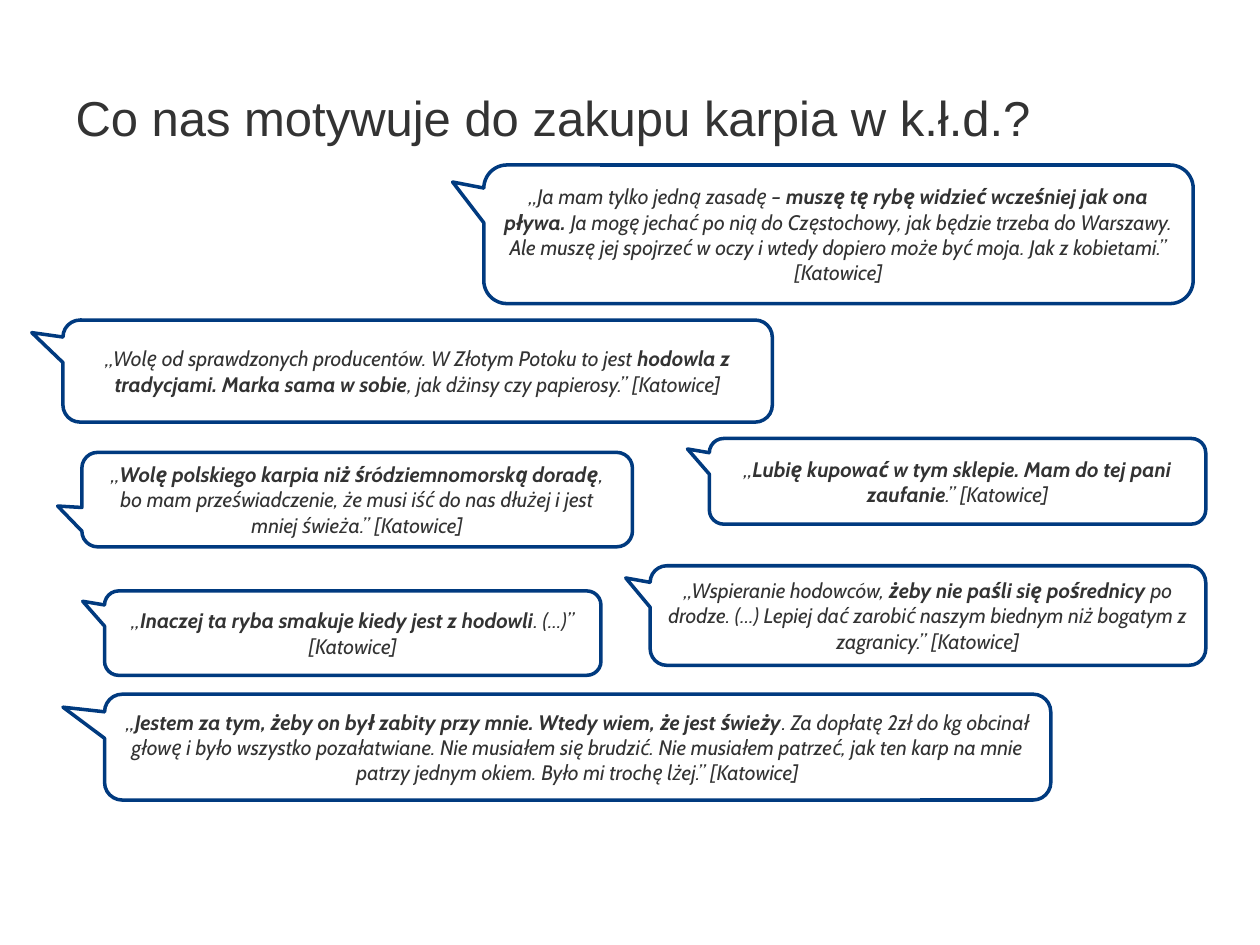
from dataclasses import dataclass

from pptx import Presentation
from pptx.dml.color import RGBColor
from pptx.enum.shapes import MSO_SHAPE
from pptx.enum.text import MSO_ANCHOR, PP_ALIGN
from pptx.slide import Slide
from pptx.text.text import Font
from pptx.util import Inches, Pt


@dataclass(frozen=True)
class Theme:
    text: RGBColor = RGBColor(0x33, 0x33, 0x33)
    outline: RGBColor = RGBColor(0x00, 0x3A, 0x7F)
    paper: RGBColor = RGBColor(0xFF, 0xFF, 0xFF)
    outline_width: Pt = Pt(2)
    title_format = {"name": "Arial", "size": Pt(28)}
    quote_format = {"name": "Cabin", "size": Pt(12), "italic": True}


@dataclass(frozen=True)
class Quote:
    left: float
    top: float
    width: float
    height: float
    before: str
    stressed: str
    after: str
    tail_y: float = -0.377


THEME = Theme()
TAIL_X = -0.544
CORNER = 0.167
TITLE = "Co nas motywuje do zakupu karpia w k.ł.d.?"
QUOTES = [
    Quote(3.84, 1.31, 5.63, 1.1, "„Ja mam tylko jedną zasadę – ",
          "muszę tę rybę widzieć wcześniej jak ona pływa.",
          " Ja mogę jechać po nią do Częstochowy, jak będzie trzeba do Warszawy. "
          "Ale muszę jej spojrzeć w oczy i wtedy dopiero może być moja. "
          "Jak z kobietami.” [Katowice]"),
    Quote(0.5, 2.54, 5.63, 0.81,
          "„Wolę od sprawdzonych producentów. W Złotym Potoku to jest ",
          "hodowla z tradycjami. Marka sama w sobie",
          ", jak dżinsy czy papierosy.” [Katowice]"),
    Quote(5.16, 4.49, 4.41, 0.79, "„Wspieranie hodowców, ",
          "żeby nie paśli się pośrednicy ",
          "po drodze. (…) Lepiej dać zarobić naszym biednym niż bogatym "
          "z zagranicy.” [Katowice]"),
    Quote(0.65, 3.59, 4.37, 0.75, "„",
          "Wolę polskiego karpia niż śródziemnomorską doradę",
          ", bo mam przeświadczenie, że musi iść do nas dłużej i jest "
          "mniej świeża.” [Katowice]", tail_y=0.068),
    Quote(0.83, 4.69, 3.94, 0.67, "„",
          "Inaczej ta ryba smakuje kiedy jest z hodowli", ". (…)” [Katowice]"),
    Quote(5.63, 3.48, 3.94, 0.68, "„",
          "Lubię kupować w tym sklepie. Mam do tej pani zaufanie",
          ".” [Katowice]"),
    Quote(0.83, 5.51, 7.51, 0.84, "„",
          "Jestem za tym, żeby on był zabity przy mnie. Wtedy wiem, że jest świeży",
          ". Za dopłatę 2zł do kg obcinał głowę i było wszystko pozałatwiane. "
          "Nie musiałem się brudzić. Nie musiałem patrzeć, jak ten karp na mnie "
          "patrzy jednym okiem. Było mi trochę lżej.” [Katowice]"),
]


def apply_format(font: Font, values: dict) -> None:
    for name, value in values.items():
        setattr(font, name, value)
    font.color.rgb = THEME.text


def set_title(slide: Slide, text: str) -> None:
    sp = slide.shapes.title
    sp.left, sp.top, sp.width, sp.height = map(Inches, (0.5, 0.3, 9, 1.25))
    tf = sp.text_frame
    tf.vertical_anchor = MSO_ANCHOR.MIDDLE
    p = tf.paragraphs[0]
    p.alignment = PP_ALIGN.LEFT
    r = p.add_run()
    r.text = text
    apply_format(r.font, THEME.title_format)


def add_quote(slide: Slide, quote: Quote) -> None:
    """Draw a speech bubble whose middle run is bold."""
    box = map(Inches, (quote.left, quote.top, quote.width, quote.height))
    sp = slide.shapes.add_shape(MSO_SHAPE.ROUNDED_RECTANGULAR_CALLOUT, *box)
    for i, value in enumerate((TAIL_X, quote.tail_y, CORNER)):
        sp.adjustments[i] = value
    sp.shadow.inherit = False
    sp.fill.solid()
    sp.fill.fore_color.rgb = THEME.paper
    sp.line.color.rgb = THEME.outline
    sp.line.width = THEME.outline_width

    tf = sp.text_frame
    tf.word_wrap = True
    tf.vertical_anchor = MSO_ANCHOR.MIDDLE
    p = tf.paragraphs[0]
    p.alignment = PP_ALIGN.CENTER
    for text, bold in ((quote.before, False), (quote.stressed, True), (quote.after, False)):
        r = p.add_run()
        r.text = text
        apply_format(r.font, THEME.quote_format | {"bold": bold})


def main() -> None:
    prs = Presentation()
    prs.slide_width, prs.slide_height = Inches(10), Inches(7.5)
    slide = prs.slides.add_slide(prs.slide_layouts.get_by_name("Title Only"))
    set_title(slide, TITLE)
    for quote in QUOTES:
        add_quote(slide, quote)
    prs.save("out.pptx")


if __name__ == "__main__":
    main()
